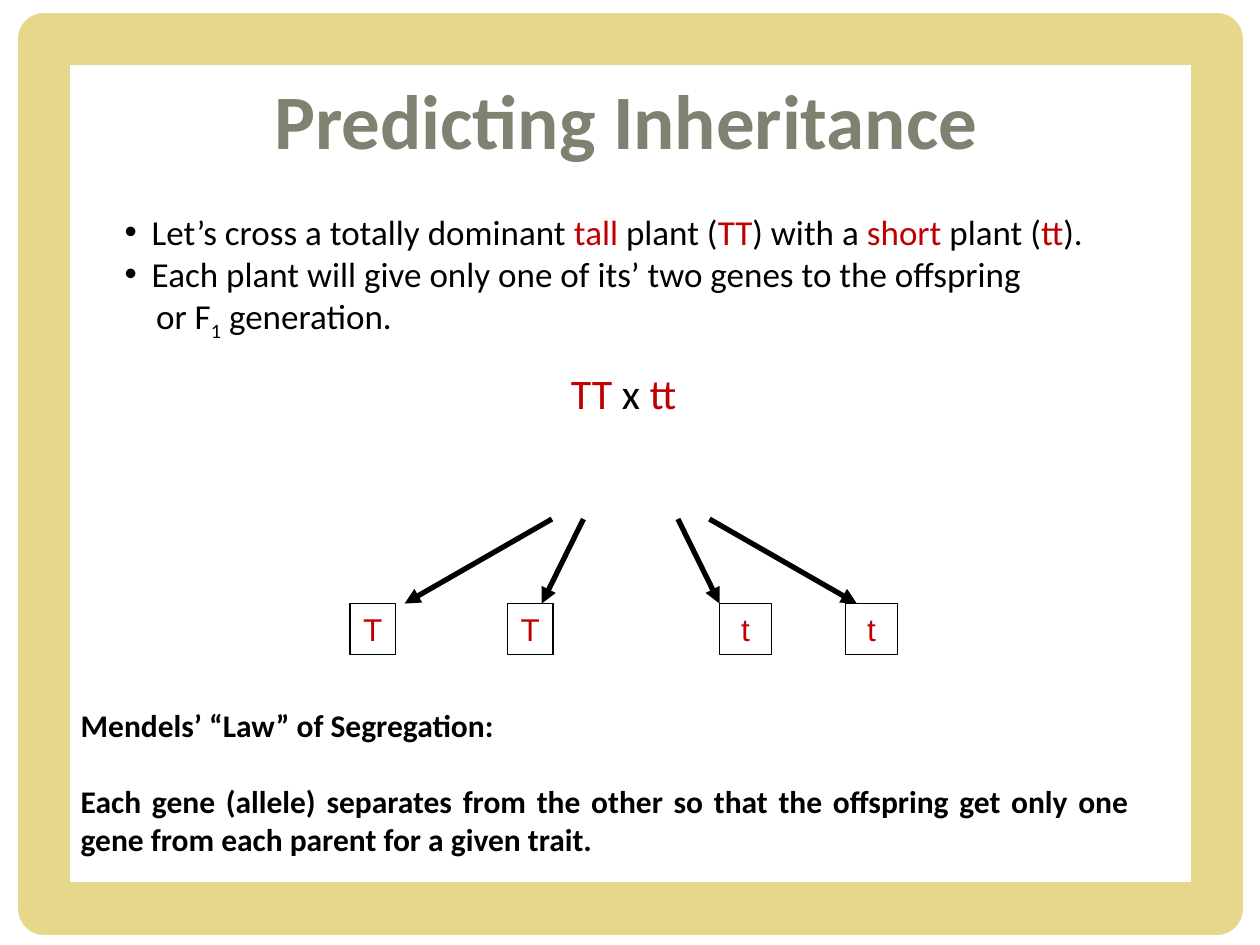
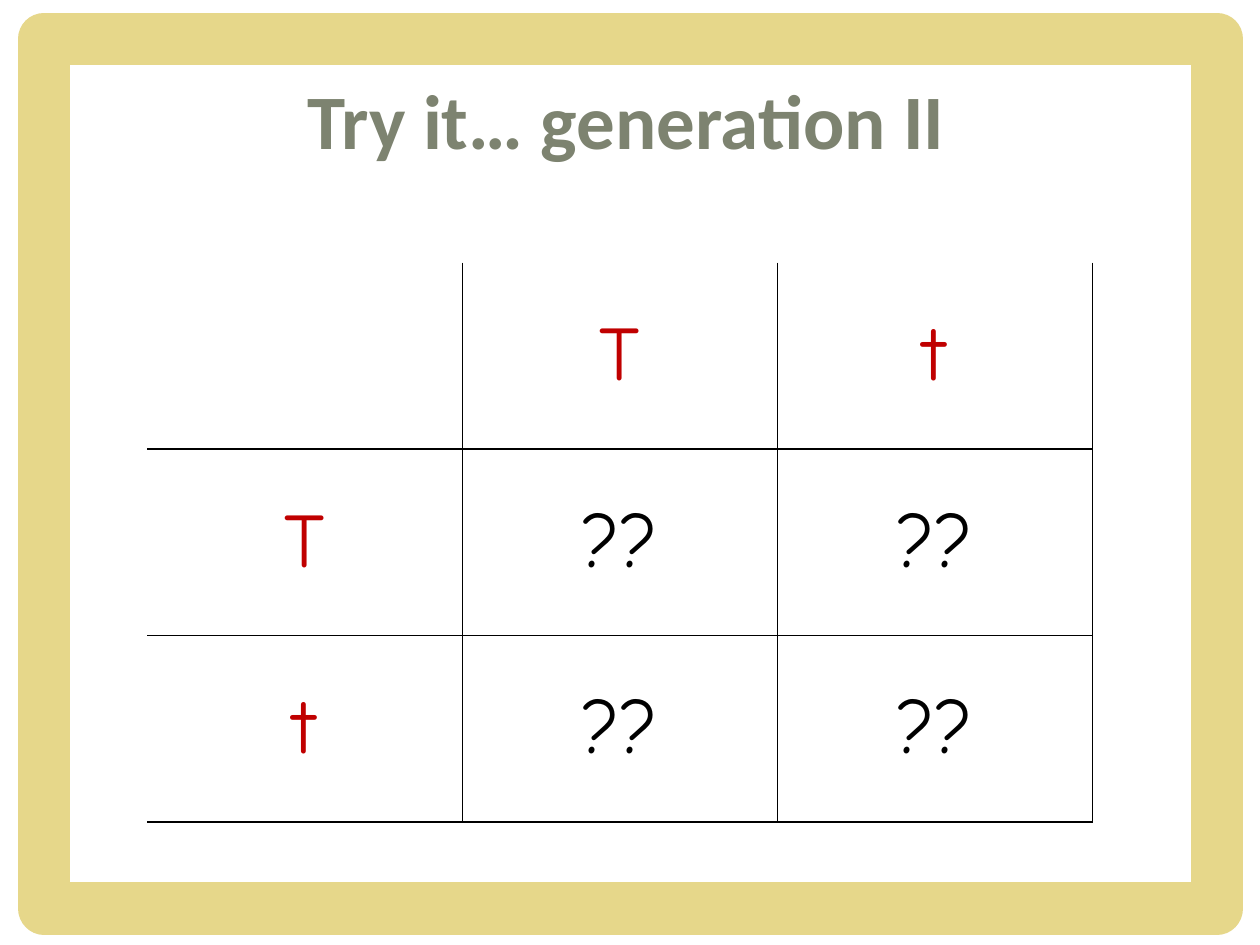
from pptx import Presentation
from pptx.dml.color import RGBColor
from pptx.enum.shapes import MSO_CONNECTOR, MSO_SHAPE
from pptx.enum.text import MSO_ANCHOR as Anchor, MSO_AUTO_SIZE as AutoSize, PP_ALIGN as Align
from pptx.oxml.ns import qn
from pptx.util import Pt
from lxml.etree import SubElement

# Content: a run is (words, colour name)
CROSS_TITLE = "Predicting Inheritance"
CROSS_LINES = [
    ("bullet", [("Let’s cross a totally dominant ", "ink"), ("tall", "gene"),
                (" plant (", "ink"), ("TT", "gene"), (") with a ", "ink"),
                ("short", "gene"), (" plant (", "ink"), ("tt", "gene"), (").", "ink")]),
    ("bullet", [("Each plant will give only one of its’ two genes to the offspring", "ink")]),
    ("continued", [("or F", "ink"), ("1", "subscript"), (" generation.", "ink")]),
    ("formula", [("TT ", "gene"), ("x ", "ink"), ("tt", "gene")]),
]
# Gamete: letter, box left, box width
GAMETES = [("T", 200, 26), ("T", 290, 26), ("t", 411, 30), ("t", 483, 30)]
LAW = ["Mendels’ “Law” of Segregation:",
       "Each gene (allele) separates from the other so that the offspring get only one "
       "gene from each parent for a given trait."]
SQUARE_TITLE = "Try it… generation II"
SQUARE = [["", "T", "t"], ["T", "??", "??"], ["t", "??", "??"]]

# Shared look
COLOURS = {"ink": "000000", "gene": "C00000", "subscript": "000000",
           "title": "7D8370", "frame": "E6D78A"}
BODY_FONT = "Calibri"
# Line kind: alignment, size, space before, left margin, first-line indent
LINE_STYLES = {
    "bullet": (Align.JUSTIFY, 20, 0, 15.5, -15.5),
    "continued": (Align.JUSTIFY, 20, 0, 18, 0),
    "formula": (Align.CENTER, 24, 14.6, 0, 0),
}


def colour(name):
    return RGBColor.from_string(COLOURS[name])


def apply(target, formats):
    for attribute, value in formats.items():
        setattr(target, attribute, value)


def write(paragraph, words, tint, size, font=BODY_FONT, bold=False):
    run = paragraph.add_run()
    run.text = words
    apply(run.font, {"name": font, "size": Pt(size), "bold": bold})
    run.font.color.rgb = colour(tint)
    return run


def place(shape, left, top, width, height):
    apply(shape, {"left": Pt(left), "top": Pt(top), "width": Pt(width), "height": Pt(height)})


def outlined_box(slide, left, top, width, height, tint, weight):
    box = slide.shapes.add_shape(MSO_SHAPE.RECTANGLE, Pt(left), Pt(top), Pt(width), Pt(height))
    box.shadow.inherit = False
    box.fill.background()
    box.line.color.rgb = colour(tint)
    box.line.width = Pt(weight)
    return box


def framed_slide(deck, layout, heading):
    slide = deck.slides.add_slide(deck.slide_layouts[layout])
    outlined_box(slide, 25.2, 22.3, 670.3, 496.8, "frame", 30)
    title = slide.shapes.title
    place(title, 31, 4.3, 653.8, 90)
    apply(title.text_frame, {
        "vertical_anchor": Anchor.BOTTOM, "auto_size": AutoSize.NONE, "word_wrap": True,
        "margin_left": 0, "margin_top": Pt(3.6), "margin_right": 0, "margin_bottom": 0})
    paragraph = title.text_frame.paragraphs[0]
    paragraph.alignment = Align.CENTER
    write(paragraph, heading, "title", 44, bold=True)
    return slide


def paragraphs(frame, count):
    return [frame.paragraphs[0]] + [frame.add_paragraph() for _ in range(count - 1)]


def add_cross_lines(slide):
    body = slide.placeholders[1]
    place(body, 64, 116.6, 584.6, 124)
    frame = body.text_frame
    apply(frame, {"auto_size": AutoSize.NONE, "word_wrap": True, "vertical_anchor": Anchor.TOP})
    for paragraph, (kind, runs) in zip(paragraphs(frame, len(CROSS_LINES)), CROSS_LINES):
        align, size, before, margin, indent = LINE_STYLES[kind]
        apply(paragraph, {"alignment": align, "space_before": Pt(before)})
        properties = paragraph._p.get_or_add_pPr()
        properties.set("marL", str(Pt(margin)))
        properties.set("indent", str(Pt(indent)))
        if kind != "bullet":
            SubElement(properties, qn("a:buNone"))
        for words, tint in runs:
            run = write(paragraph, words, tint, size)
            if tint == "subscript":
                run.font._element.set("baseline", "-25000")


def add_arrow(slide, start, end):
    arrow = slide.shapes.add_connector(MSO_CONNECTOR.STRAIGHT, *map(Pt, start + end))
    arrow.line.color.rgb = colour("ink")
    arrow.line.width = Pt(3)
    SubElement(arrow.line._get_or_add_ln(), qn("a:tailEnd"), type="triangle")
    SubElement(arrow._element.spPr, qn("a:effectLst"))


def add_gametes(slide):
    centre, arrow_top, box_top = 360.4, 296.6, 344.9
    # Arrows fan out evenly on both sides of the centre
    for side in (-1, 1):
        for start, end in ((45, 129.2), (27, 50.8)):
            add_arrow(slide, (centre + side * start, arrow_top), (centre + side * end, box_top))
    for letter, left, width in GAMETES:
        box = outlined_box(slide, left, box_top, width, 29, "ink", 0.75)
        apply(box.text_frame, {"word_wrap": False, "vertical_anchor": Anchor.MIDDLE})
        paragraph = box.text_frame.paragraphs[0]
        paragraph.alignment = Align.CENTER
        write(paragraph, letter, "gene", 18, font="Arial")


def add_law(slide):
    frame = slide.shapes.add_textbox(Pt(39), Pt(399.6), Pt(613.4), Pt(94.3)).text_frame
    frame.word_wrap = True
    name, statement = paragraphs(frame, len(LAW))
    apply(statement, {"alignment": Align.JUSTIFY, "space_before": Pt(22)})
    for paragraph, words in zip((name, statement), LAW):
        write(paragraph, words, "ink", 18, bold=True)


def add_borders(cell, drawn_sides):
    properties = cell._tc.get_or_add_tcPr()
    for position, side in enumerate("LRTB"):
        line = SubElement(properties, qn(f"a:ln{side}"), w=str(Pt(1)))
        if side in drawn_sides:
            fill = SubElement(line, qn("a:solidFill"))
            SubElement(fill, qn("a:srgbClr"), val=COLOURS["ink"])
        else:
            SubElement(line, qn("a:noFill"))
        properties.insert(position, line)


def add_square(slide):
    size = len(SQUARE)
    square = slide.shapes.add_table(size, size, Pt(84.2), Pt(150), Pt(540), Pt(319.8)).table
    apply(square, {"first_row": False, "horz_banding": False})
    for r, row in enumerate(SQUARE):
        square.rows[r].height = Pt(106.6)
        for c, genes in enumerate(row):
            cell = square.cell(r, c)
            cell.vertical_anchor = Anchor.MIDDLE
            cell.fill.background()
            # The outer top and left edges stay open
            add_borders(cell, "RB" + ("T" if r else "") + ("L" if c else ""))
            if genes:
                paragraph = cell.text_frame.paragraphs[0]
                apply(paragraph, {"alignment": Align.CENTER, "space_before": Pt(8.8)})
                tint = "ink" if r and c else "gene"
                write(paragraph, genes, tint, 44, font="Comic Neue")


def main():
    deck = Presentation()
    apply(deck, {"slide_width": Pt(720), "slide_height": Pt(540)})

    # Cross of two plants
    cross = framed_slide(deck, 1, CROSS_TITLE)
    add_cross_lines(cross)
    add_gametes(cross)
    add_law(cross)

    # Punnett square to fill in
    add_square(framed_slide(deck, 5, SQUARE_TITLE))
    deck.save("out.pptx")


if __name__ == "__main__":
    main()
